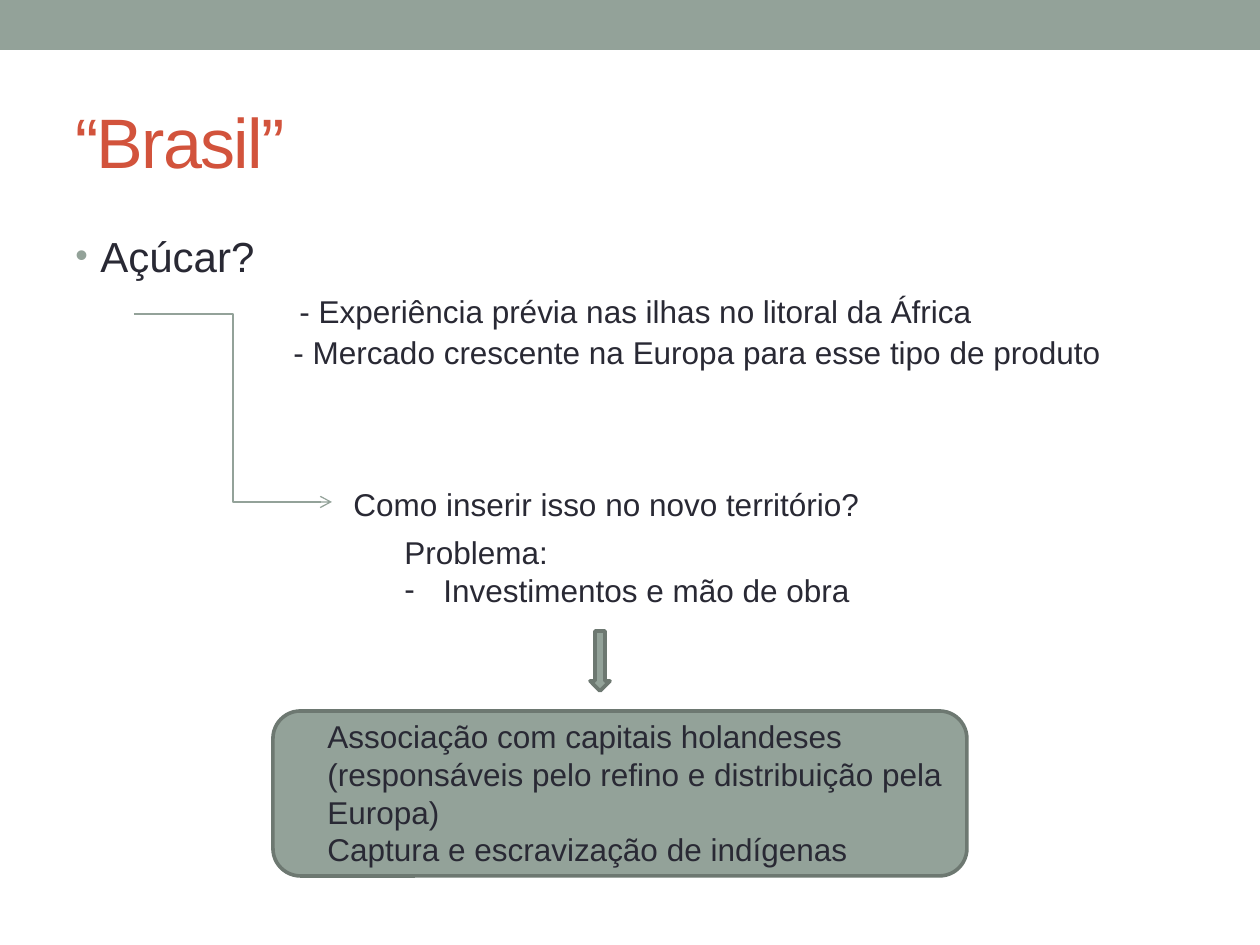
from lxml import etree
from pptx import Presentation
from pptx.dml.color import RGBColor
from pptx.enum.shapes import MSO_CONNECTOR as CONN, MSO_SHAPE as SHAPE
from pptx.enum.text import MSO_ANCHOR as ANCHOR
from pptx.oxml.ns import qn
from pptx.util import Emu, Pt

PX = 914400 / 126
COLORS = {"sage": "93A299", "edge": "6D7871", "title": "D2533C", "text": "292934"}


def px(n):
    return Emu(round(n * PX))


def rgb(name):
    return RGBColor.from_string(COLORS[name])


def add_block(s, kind, x, y, w, h, edge=None):
    sp = s.shapes.add_shape(kind, px(x), px(y), px(w), px(h))
    sp.shadow.inherit = False
    sp.fill.solid()
    sp.fill.fore_color.rgb = rgb("sage")
    if edge:
        sp.line.color.rgb = rgb(edge)
        sp.line.width = Pt(2.08)
    else:
        sp.line.fill.background()


def add_text(s, x, y, w, h, lines, top=6, anchor=ANCHOR.TOP):
    """Each line is a dict: text, and optionally size, color, before, indent, bullet, hang."""
    tf = s.shapes.add_textbox(px(x), px(y), px(w), px(h)).text_frame
    tf.word_wrap = True
    tf.margin_top = px(top)
    tf.vertical_anchor = anchor
    for i, line in enumerate(lines):
        p = tf.add_paragraph() if i else tf.paragraphs[0]
        p.text = line["text"]
        p.font.name = "Arial"
        p.font.size = Pt(line.get("size", 18))
        p.font.color.rgb = rgb(line.get("color", "text"))
        p.space_before = Pt(line.get("before", 0))
        pPr = p._p.get_or_add_pPr()
        hang = line.get("hang", 0)
        pPr.set("marL", str(px(line.get("indent", hang))))
        pPr.set("indent", str(px(-hang)))
        if "bullet" in line:
            add_bullet(pPr, line["bullet"], line.get("bullet_color"))
    return tf


def add_bullet(pPr, char, color=None):
    bullet = []
    if color:
        clr = etree.Element(qn("a:buClr"))
        etree.SubElement(clr, qn("a:srgbClr"), val=COLORS[color])
        bullet += [clr, etree.Element(qn("a:buSzPct"), val="85000")]
    bullet += [etree.Element(qn("a:buFont"), typeface="Arial"),
               etree.Element(qn("a:buChar"), char=char)]
    # Bullet settings come before the default run properties
    for el in bullet:
        pPr.find(qn("a:defRPr")).addprevious(el)


def add_elbow_arrow(s, x1, y1, x2, y2):
    c = s.shapes.add_connector(CONN.ELBOW, px(x1), px(y1), px(x2), px(y2))
    c.line.color.rgb = rgb("sage")
    c.line.width = Pt(0.75)
    etree.SubElement(c.line._get_or_add_ln(), qn("a:tailEnd"), type="arrow")
    etree.SubElement(c._element.spPr, qn("a:effectLst"))


def main():
    prs = Presentation()
    prs.slide_width, prs.slide_height = px(1260), px(945)
    s = prs.slides.add_slide(prs.slide_layouts[6])

    # Top band and title
    add_block(s, SHAPE.RECTANGLE, 0, 0, 1260, 50)
    tf = add_text(s, 63, 73, 1134, 136,
                  [{"text": "“Brasil”", "size": 40, "color": "title"}],
                  anchor=ANCHOR.MIDDLE)
    tf.paragraphs[0].runs[0].font._element.set("spc", "-100")

    # Question, reasons and follow-up
    add_text(s, 63, 220, 1134, 672, [
        {"text": "Açúcar?", "size": 24, "hang": 25,
         "bullet": "•", "bullet_color": "sage"},
        {"text": "- Experiência prévia nas ilhas no litoral da África",
         "indent": 224, "before": 6.5},
        {"text": "- Mercado crescente na Europa para esse tipo de produto",
         "indent": 218, "before": 2},
        {"text": "Como inserir isso no novo território?",
         "indent": 278, "before": 65},
    ], top=10)
    add_elbow_arrow(s, 134, 314, 332, 502)

    # Problem
    add_text(s, 392, 527, 576, 127, [
        {"text": "Problema:"},
        {"text": "Investimentos e mão de obra", "bullet": "-", "hang": 39},
    ])

    # Solution
    add_block(s, SHAPE.DOWN_ARROW, 590, 631, 20, 60, "edge")
    add_block(s, SHAPE.ROUNDED_RECTANGLE, 273, 711, 694, 165, "edge")
    add_text(s, 315, 711, 694, 165, [
        {"text": "Associação com capitais holandeses (responsáveis pelo refino"
                 " e distribuição pela Europa)"},
        {"text": "Captura e escravização de indígenas"},
    ])

    prs.save("out.pptx")


if __name__ == "__main__":
    main()
